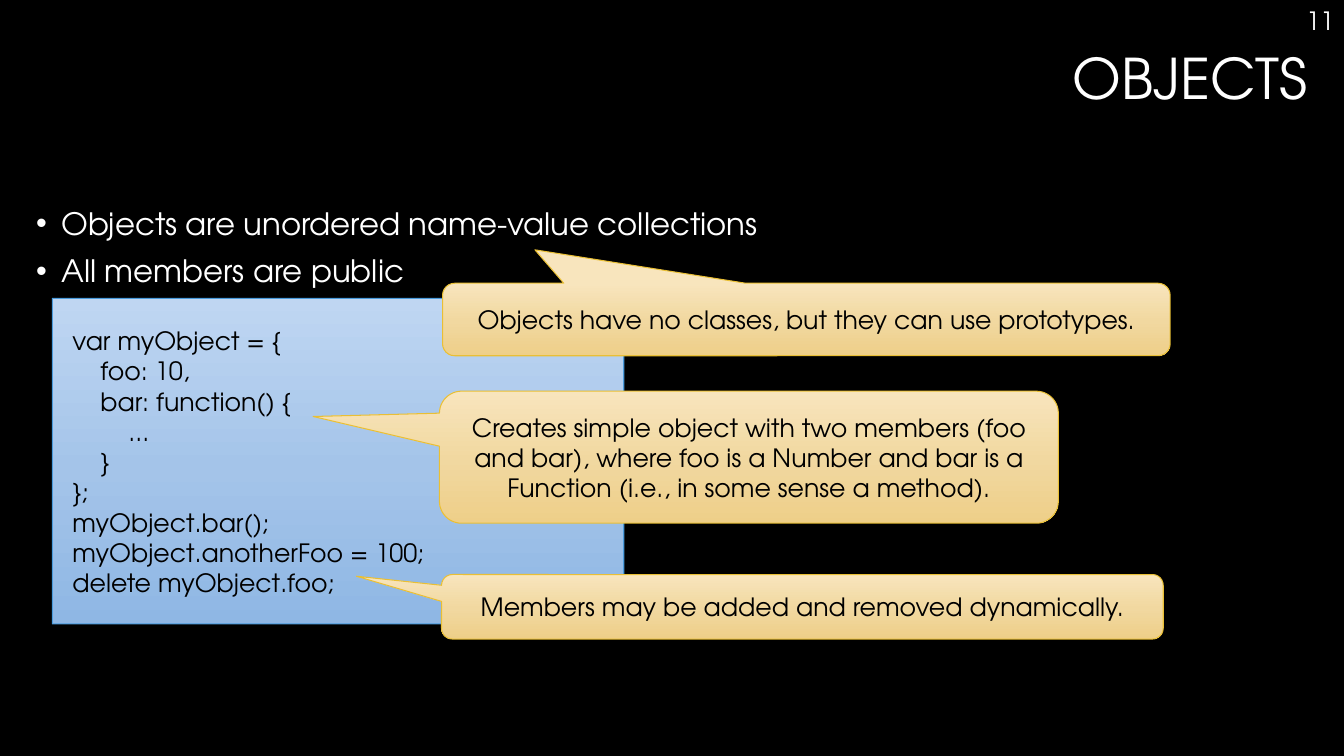
"""Builds the slide about objects: two bullets, a code sample and three callouts."""
from copy import deepcopy
from dataclasses import dataclass
from typing import NamedTuple

from lxml.etree import SubElement
from pptx import Presentation
from pptx.dml.color import RGBColor
from pptx.enum.shapes import MSO_SHAPE
from pptx.enum.text import MSO_ANCHOR, PP_ALIGN
from pptx.oxml.ns import qn
from pptx.shapes.autoshape import Shape
from pptx.slide import Slide
from pptx.util import Pt


@dataclass(frozen=True)
class Theme:
    """Colours, font and type sizes of the slide."""
    font: str = "TeX Gyre Adventor"
    background: str = "000000"
    light_text: str = "FFFFFF"
    dark_text: str = "000000"
    code_fill: tuple[str, ...] = ("BFD6F2", "A4C4E9", "8FB7E4")
    code_line: str = "4A9BDC"
    callout_fill: tuple[str, ...] = ("F8E5BD", "F1D8A0", "EECF89")
    callout_line: str = "E9BF35"
    gradient_positions: tuple[float, ...] = (0, 0.52, 1)
    line_width: float = 0.75
    title_size: float = 40
    bullet_size: float = 22
    text_size: float = 18


class Box(NamedTuple):
    """Left, top, width and height in points."""
    left: float
    top: float
    width: float
    height: float


@dataclass(frozen=True)
class TextBlock:
    """Light text on the background."""
    box: Box
    lines: tuple[str, ...]
    size: float
    alignment: PP_ALIGN = PP_ALIGN.RIGHT
    line_spacing: float = 1.0
    space_before: float = 0
    bulleted: bool = False


@dataclass(frozen=True)
class Callout:
    """A speech bubble with its pointer offset as a share of its size."""
    box: Box
    pointer: tuple[float, float]
    text: str


class CodeLine(NamedTuple):
    """One line of code and its nesting level."""
    level: int
    text: str


THEME = Theme()
BULLET_INDENT = 18
CODE_INDENT = 20
CORNER = 0.167
SNIP = 0.068

TEXT_BLOCKS = (
    TextBlock(Box(18.7, 145.4, 922.3, 362.2),
              ("Objects are unordered name-value collections", "All members are public"),
              THEME.bullet_size, PP_ALIGN.LEFT, 0.9, 10, True),
    TextBlock(Box(18.7, 33.1, 922.3, 101.5), ("OBJECTS",), THEME.title_size, line_spacing=0.9),
    TextBlock(Box(752.4, 0, 207.6, 28.8), ("11",), THEME.text_size),
)
CODE_BOX = Box(37.4, 213.1, 408.2, 232.6)
CODE_LINES = (
    CodeLine(0, "var myObject = {"),
    CodeLine(1, "foo: 10,"),
    CodeLine(1, "bar: function() {"),
    CodeLine(2, "..."),
    CodeLine(1, "}"),
    CodeLine(0, "};"),
    CodeLine(0, "myObject.bar();"),
    CodeLine(0, "myObject.anotherFoo = 100;"),
    CodeLine(0, "delete myObject.foo;"),
)
CALLOUTS = (
    Callout(Box(315.4, 410.4, 515.5, 46.1), (-0.618, -0.473),
            "Members may be added and removed dynamically."),
    Callout(Box(313.9, 279.4, 442.1, 94.3), (-0.704, -0.308),
            "Creates simple object with two members (foo and bar), where foo is a Number "
            "and bar is a Function (i.e., in some sense a method)."),
    Callout(Box(316.1, 202.3, 519.8, 51.8), (-0.373, -0.961),
            "Objects have no classes, but they can use prototypes."),
)


def write_text(shape: Shape, lines: tuple[str, ...], size: float, color: str,
               alignment: PP_ALIGN) -> None:
    """Fill a shape with one formatted paragraph per line."""
    text_frame = shape.text_frame
    text_frame.word_wrap = True
    text_frame.text = "\n".join(lines)
    for paragraph in text_frame.paragraphs:
        paragraph.alignment = alignment
        for run in paragraph.runs:
            run.font.name = THEME.font
            run.font.size = Pt(size)
            run.font.color.rgb = RGBColor.from_string(color)


def add_panel(slide: Slide, kind: MSO_SHAPE, box: Box, adjustments: tuple[float, ...],
              colors: tuple[str, ...], line_color: str) -> Shape:
    """Add a preset shape with a vertical gradient and a thin outline."""
    shape = slide.shapes.add_shape(kind, *map(Pt, box))
    shape.shadow.inherit = False
    for index, value in enumerate(adjustments):
        shape.adjustments[index] = value
    shape.fill.gradient()
    shape.fill.gradient_angle = 270
    first_stop = shape.element.spPr.find(".//" + qn("a:gs"))
    first_stop.addnext(deepcopy(first_stop))
    for stop, position, color in zip(shape.fill.gradient_stops, THEME.gradient_positions, colors):
        stop.position = position
        stop.color.rgb = RGBColor.from_string(color)
    shape.line.color.rgb = RGBColor.from_string(line_color)
    shape.line.width = Pt(THEME.line_width)
    return shape


def add_text_block(slide: Slide, block: TextBlock) -> None:
    """Add a text box, with bullets if asked for."""
    shape = slide.shapes.add_textbox(*map(Pt, block.box))
    write_text(shape, block.lines, block.size, THEME.light_text, block.alignment)
    for paragraph in shape.text_frame.paragraphs:
        paragraph.line_spacing = block.line_spacing
        paragraph.space_before = Pt(block.space_before)
        if block.bulleted:
            properties = paragraph._p.get_or_add_pPr()
            properties.set("marL", str(Pt(BULLET_INDENT)))
            properties.set("indent", str(-Pt(BULLET_INDENT)))
            SubElement(properties, qn("a:buFont"), typeface="Arial")
            SubElement(properties, qn("a:buChar"), char="•")


def add_code(slide: Slide) -> None:
    """Add the code sample with its nested lines."""
    shape = add_panel(slide, MSO_SHAPE.SNIP_1_RECTANGLE, CODE_BOX, (SNIP,),
                      THEME.code_fill, THEME.code_line)
    write_text(shape, tuple(line.text for line in CODE_LINES), THEME.text_size,
               THEME.dark_text, PP_ALIGN.LEFT)
    text_frame = shape.text_frame
    text_frame.vertical_anchor = MSO_ANCHOR.TOP
    text_frame.margin_left = text_frame.margin_right = text_frame.margin_bottom = Pt(14.4)
    text_frame.margin_top = Pt(11.5)
    for paragraph, line in zip(text_frame.paragraphs, CODE_LINES):
        paragraph._p.get_or_add_pPr().set("marL", str(Pt(line.level * CODE_INDENT)))


def add_callout(slide: Slide, callout: Callout) -> None:
    """Add a speech bubble with centred text."""
    shape = add_panel(slide, MSO_SHAPE.ROUNDED_RECTANGULAR_CALLOUT, callout.box,
                      (*callout.pointer, CORNER), THEME.callout_fill, THEME.callout_line)
    write_text(shape, (callout.text,), THEME.text_size, THEME.dark_text, PP_ALIGN.CENTER)
    shape.text_frame.vertical_anchor = MSO_ANCHOR.MIDDLE


def main() -> None:
    """Build and save the presentation."""
    presentation = Presentation()
    presentation.slide_width, presentation.slide_height = Pt(960), Pt(540)
    slide = presentation.slides.add_slide(presentation.slide_layouts[6])
    slide.background.fill.solid()
    slide.background.fill.fore_color.rgb = RGBColor.from_string(THEME.background)
    for block in TEXT_BLOCKS:
        add_text_block(slide, block)
    add_code(slide)
    for callout in CALLOUTS:
        add_callout(slide, callout)
    presentation.save("out.pptx")


if __name__ == "__main__":
    main()
